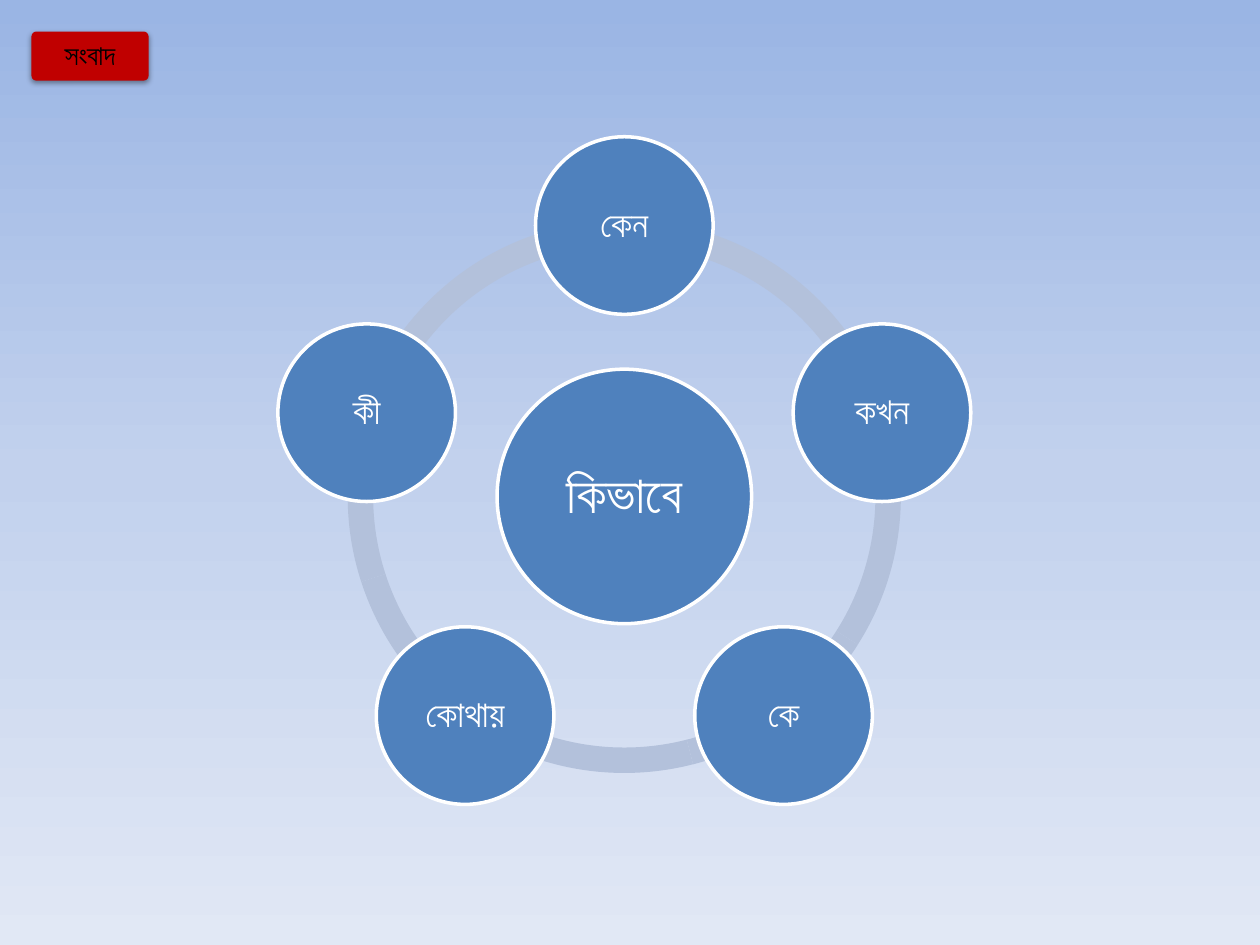
import math
import copy
import pptx
import pptx.util
import pptx.dml.color
import pptx.enum.shapes
import pptx.enum.text
import pptx.oxml
import pptx.oxml.ns

RGB = pptx.dml.color.RGBColor
KIND = pptx.enum.shapes.MSO_SHAPE
BLUE = RGB(0x4F, 0x81, 0xBD)
HAZE = RGB(0xB3, 0xC1, 0xDB)
RED = RGB(0xC0, 0x00, 0x00)
WHITE = RGB(0xFF, 0xFF, 0xFF)
BLACK = RGB(0x00, 0x00, 0x00)
SKY = ((0, RGB(0x9A, 0xB5, 0xE4)), (0.5, RGB(0xC2, 0xD1, 0xED)), (1, RGB(0xE1, 0xE8, 0xF5)))
SHADE = (
    '<a:outerShdw %s blurRad="40000" dist="20000" dir="5400000" rotWithShape="0">'
    '<a:srgbClr val="000000"><a:alpha val="38000"/></a:srgbClr></a:outerShdw>'
    % pptx.oxml.ns.nsdecls("a")
)
MID = (0.4955, 0.394)
STEP = 43.2
TURNS = [32.4 + STEP * i for i in (2, 1, 0, 4, 3)]
WORDS = ("কেন", "কখন", "কে", "কোথায়", "কী")


def write(shape, text, size, color=WHITE, font="Calibri", inset=0.03):
    frame = shape.text_frame
    frame.word_wrap = True
    frame.vertical_anchor = pptx.enum.text.MSO_ANCHOR.MIDDLE
    frame.margin_left = frame.margin_right = pptx.util.Inches(inset)
    frame.margin_top = frame.margin_bottom = pptx.util.Inches(inset)
    para = frame.paragraphs[0]
    para.alignment = pptx.enum.text.PP_ALIGN.CENTER
    para.line_spacing = 0.9
    run = para.add_run()
    run.text = text
    run.font.size = pptx.util.Pt(size)
    run.font.name = font
    run.font.color.rgb = color


class Board:
    def __init__(self, deck):
        self.slide = deck.slides.add_slide(deck.slide_layouts[6])
        self.wide = deck.slide_width

    def sky(self, stops):
        fill = self.slide.background.fill
        fill.gradient()
        fill.gradient_angle = 270
        first = self.slide.element.find(".//" + pptx.oxml.ns.qn("a:gs"))
        first.addnext(copy.deepcopy(first))
        for stop, (place, color) in zip(fill.gradient_stops, stops):
            stop.position = place
            stop.color.rgb = color

    def shape(self, kind, box, color):
        item = self.slide.shapes.add_shape(kind, *(round(self.wide * part) for part in box))
        item.shadow.inherit = False
        item.fill.solid()
        item.fill.fore_color.rgb = color
        item.line.fill.background()
        return item

    def round(self, kind, mid, span, color):
        return self.shape(kind, (mid[0] - span / 2, mid[1] - span / 2, span, span), color)

    def arc(self, mid, span, start, end):
        item = self.round(KIND.BLOCK_ARC, mid, span, HAZE)
        for i, value in enumerate((start * 0.6, end * 0.6, 0.046)):
            item.adjustments[i] = value

    def disc(self, mid, span, text, **style):
        item = self.round(KIND.OVAL, mid, span, BLUE)
        item.line.color.rgb = WHITE
        item.line.width = pptx.util.Pt(2)
        write(item, text, **style)

    def badge(self, box, text, **style):
        item = self.shape(KIND.ROUNDED_RECTANGLE, box, RED)
        item.adjustments[0] = 0.1
        glow = item.element.spPr.find(pptx.oxml.ns.qn("a:effectLst"))
        glow.append(pptx.oxml.parse_xml(SHADE))
        write(item, text, **style)


def main():
    deck = pptx.Presentation()
    deck.slide_width = pptx.util.Inches(10)
    deck.slide_height = pptx.util.Inches(7.5)
    board = Board(deck)
    board.sky(SKY)
    for start in TURNS:
        end = 32.4 if start > 200 else start + STEP
        board.arc(MID, 0.439, start, end)
    board.disc(MID, 0.202, "কিভাবে", size=30, inset=0.04)
    for i, word in enumerate(WORDS):
        turn = math.radians(72 * i - 90)
        spot = (MID[0] + 0.215 * math.cos(turn), MID[1] + 0.215 * math.sin(turn))
        board.disc(spot, 0.141, word, size=21)
    board.badge((0.025, 0.025, 0.093, 0.039), "সংবাদ", size=16, color=BLACK, inset=0.02)
    deck.save("out.pptx")


if __name__ == "__main__":
    main()
